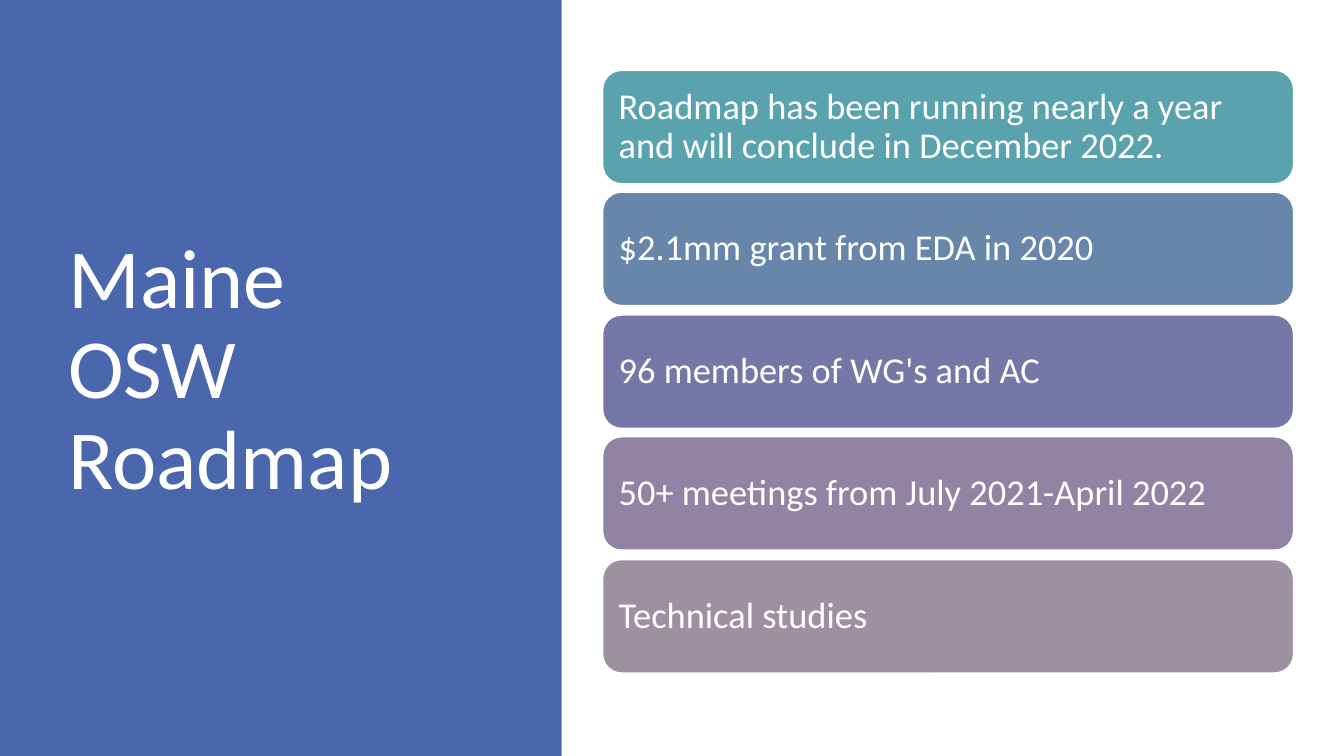
from dataclasses import dataclass

from pptx import Presentation
from pptx.dml.color import RGBColor
from pptx.enum.shapes import MSO_SHAPE
from pptx.enum.text import MSO_ANCHOR, PP_ALIGN
from pptx.shapes.autoshape import Shape
from pptx.slide import Slide
from pptx.util import Emu, Pt


@dataclass(frozen=True)
class Theme:
    font: str = "Calibri"
    white: str = "FFFFFF"
    panel: str = "4A66AC"
    title_size: int = 60
    bar_size: int = 26
    line_spacing: float = 0.9
    outline: int = 1


@dataclass(frozen=True)
class Box:
    left: int
    top: int
    width: int
    height: int


@dataclass(frozen=True)
class Bar:
    text: str
    fill: str


THEME = Theme()
EMU_PER_PX = 9525
SLIDE = Box(0, 0, 1280, 720)
PANEL = Box(0, 0, 535, 720)
TITLE = Box(55, 65, 399, 578)
FIRST_BAR = Box(574, 67, 658, 108)
LAST_BAR_TOP = 533
BARS = (
    Bar("Roadmap has been running nearly a year and will conclude in December 2022.", "5AA2AE"),
    Bar("$2.1mm grant from EDA in 2020", "6885AA"),
    Bar("96 members of WG's and AC", "7677A6"),
    Bar("50+ meetings from July 2021-April 2022", "9083A3"),
    Bar("Technical studies", "9D90A0"),
)


def px(n: int) -> Emu:
    return Emu(n * EMU_PER_PX)


def place(box: Box) -> tuple[Emu, Emu, Emu, Emu]:
    return px(box.left), px(box.top), px(box.width), px(box.height)


def write(sp: Shape, text: str, *, size: int, color: str = THEME.white,
          inset_x: int = 10, inset_y: int = 5) -> None:
    tf = sp.text_frame
    tf.word_wrap = True
    tf.vertical_anchor = MSO_ANCHOR.MIDDLE
    tf.margin_left = tf.margin_right = px(inset_x)
    tf.margin_top = tf.margin_bottom = px(inset_y)
    p = tf.paragraphs[0]
    p.alignment = PP_ALIGN.LEFT
    p.line_spacing = THEME.line_spacing
    r = p.add_run()
    r.text = text
    r.font.name = THEME.font
    r.font.size = Pt(size)
    r.font.color.rgb = RGBColor.from_string(color)


def add_block(s: Slide, box: Box, kind: MSO_SHAPE, fill: str, line: str | None = None) -> Shape:
    sp = s.shapes.add_shape(kind, *place(box))
    sp.shadow.inherit = False
    sp.fill.solid()
    sp.fill.fore_color.rgb = RGBColor.from_string(fill)
    if line is None:
        sp.line.fill.background()
    else:
        sp.line.color.rgb = RGBColor.from_string(line)
        sp.line.width = Pt(THEME.outline)
    return sp


def add_bars(s: Slide) -> None:
    travel = LAST_BAR_TOP - FIRST_BAR.top
    for i, bar in enumerate(BARS):
        top = FIRST_BAR.top + travel * i // (len(BARS) - 1)
        box = Box(FIRST_BAR.left, top, FIRST_BAR.width, FIRST_BAR.height)
        sp = add_block(s, box, MSO_SHAPE.ROUNDED_RECTANGLE, bar.fill, THEME.white)
        write(sp, bar.text, size=THEME.bar_size)


def main() -> None:
    prs = Presentation()
    prs.slide_width, prs.slide_height = px(SLIDE.width), px(SLIDE.height)
    s = prs.slides.add_slide(prs.slide_layouts[6])
    add_block(s, PANEL, MSO_SHAPE.RECTANGLE, THEME.panel)
    write(s.shapes.add_textbox(*place(TITLE)), "Maine OSW Roadmap", size=THEME.title_size)
    add_bars(s)
    prs.save("out.pptx")


if __name__ == "__main__":
    main()
